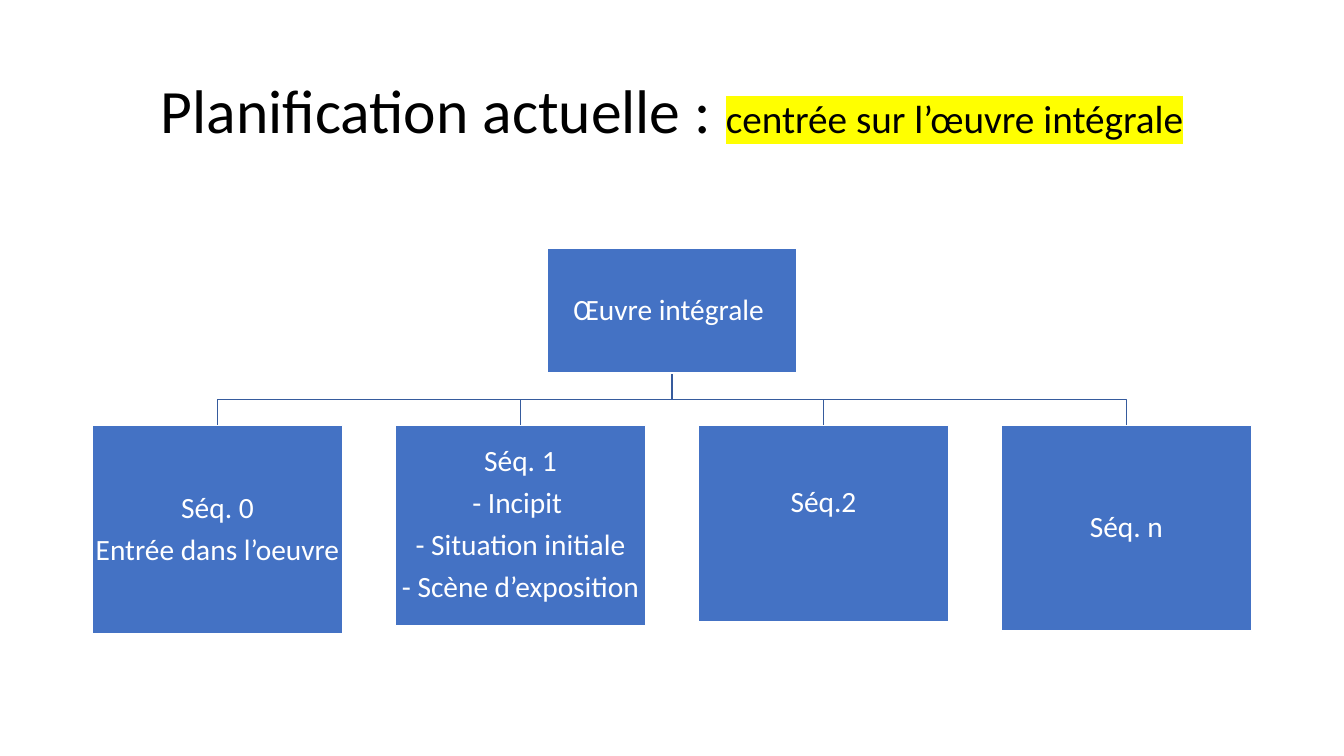
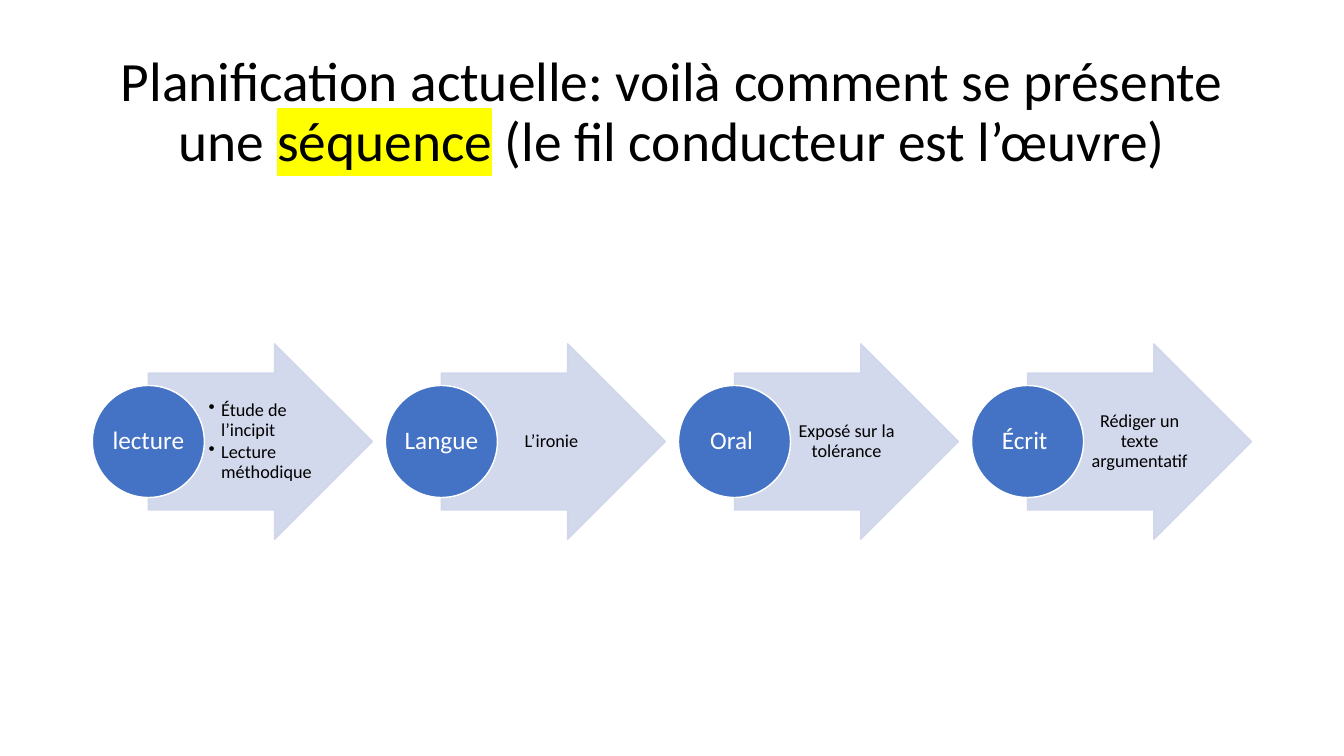
"""Build two slides on lesson planning: a sequence tree and a row of activities."""
import dataclasses

import lxml.etree
import pptx
import pptx.dml.color
import pptx.enum.shapes
import pptx.enum.text
import pptx.oxml.ns
import pptx.util

Pt = pptx.util.Pt
SHAPES = pptx.enum.shapes.MSO_SHAPE
ALIGN = pptx.enum.text.PP_ALIGN
MIDDLE = pptx.enum.text.MSO_ANCHOR.MIDDLE
qn = pptx.oxml.ns.qn


@dataclasses.dataclass(frozen=True)
class Theme:
    """Colours, font and type sizes of the presentation."""
    font: str = "Calibri"
    ink: str = "000000"
    paper: str = "FFFFFF"
    accent: str = "4472C4"
    branch: str = "365B9D"
    arrow: str = "CFD5EA"
    highlight: str = "FFFF00"
    arrow_opacity: int = 90
    title_size: float = 44
    subtitle_size: float = 28
    long_title_size: float = 39.6
    box_size: float = 21
    circle_size: float = 18
    arrow_size: float = 13
    line_spacing: float = 0.9
    line_width: float = 1


THEME = Theme()

TREE_TITLE = [
    ("Planification actuelle : ", THEME.title_size, False),
    ("centrée sur l’œuvre intégrale", THEME.subtitle_size, True),
]
TREE_ROOT = "Œuvre intégrale "
TREE_CHILDREN = [
    (["Séq. 0", "Entrée dans l’oeuvre"], 149, 1),
    (["Séq. 1", "- Incipit ", "- Situation initiale", "- Scène d’exposition"], 142.6, 1),
    (["Séq.2"], 140.4, 31),
    (["Séq. n"], 146.9, 1),
]

ACTIVITY_TITLE = [
    ("Planification actuelle: voilà comment se présente une ", THEME.long_title_size, False),
    ("séquence", THEME.long_title_size, True),
    (" (le fil conducteur est l’œuvre)", THEME.long_title_size, False),
]
ACTIVITIES = [
    ("lecture", ["Étude de l’incipit", "Lecture méthodique"]),
    ("Langue ", ["L’ironie "]),
    ("Oral ", ["Exposé sur la tolérance"]),
    ("Écrit ", ["Rédiger un texte argumentatif"]),
]

SLIDE_WIDTH, SLIDE_HEIGHT = 960, 540
MARGIN = 66
CONTENT_WIDTH = SLIDE_WIDTH - 2 * MARGIN
TITLE_TOP, TITLE_HEIGHT = 28.8, 104.4

BOX_WIDTH = 178.8
ROOT_TOP, ROOT_HEIGHT = 177.2, 89.3
CHILD_TOP = 304

CIRCLE = 80
ARROW_WIDTH, ARROW_HEIGHT = 160, 139.6
ROW_MIDDLE = 315.4
NOTE_WIDTH, NOTE_HEIGHT = 78, 98


def rgb(colour):
    """Return a colour object for a hex value."""
    return pptx.dml.color.RGBColor.from_string(colour)


def place(left, top, width, height):
    """Return a position and size in points."""
    return Pt(left), Pt(top), Pt(width), Pt(height)


def format_run(run, size, colour):
    """Set the font of a run."""
    run.font.name = THEME.font
    run.font.size = Pt(size)
    run.font.color.rgb = rgb(colour)


def highlight(run):
    """Put the marker colour behind a run."""
    marker = lxml.etree.Element(qn("a:highlight"))
    lxml.etree.SubElement(marker, qn("a:srgbClr"), val=THEME.highlight)
    run.font._element.find(qn("a:solidFill")).addnext(marker)


def add_bullet(paragraph, indent):
    """Give a paragraph a hanging bullet."""
    properties = paragraph._p.get_or_add_pPr()
    properties.set("marL", str(Pt(indent)))
    properties.set("indent", str(-Pt(indent)))
    lxml.etree.SubElement(properties, qn("a:buChar"), char="•")


def write(shape, lines, size, colour, insets=(1, 1, 1, 1)):
    """Write lines in a shape; several notes on an arrow become bullets."""
    frame = shape.text_frame
    frame.word_wrap = True
    frame.vertical_anchor = MIDDLE
    (frame.margin_left, frame.margin_top,
     frame.margin_right, frame.margin_bottom) = map(Pt, insets)
    bulleted = size == THEME.arrow_size and len(lines) > 1
    frame.text = "\n".join(lines)
    for paragraph in frame.paragraphs:
        paragraph.alignment = ALIGN.LEFT if bulleted else ALIGN.CENTER
        paragraph.line_spacing = THEME.line_spacing
        paragraph.space_after = Pt(size * (0.15 if bulleted else 0.35))
        if bulleted:
            add_bullet(paragraph, 9)
        for run in paragraph.runs:
            format_run(run, size, colour)


def add_filled(slide, kind, bounds, fill, line):
    """Add a flat preset shape."""
    shape = slide.shapes.add_shape(kind, *place(*bounds))
    shape.shadow.inherit = False
    shape.fill.solid()
    shape.fill.fore_color.rgb = rgb(fill)
    shape.line.color.rgb = rgb(line)
    shape.line.width = Pt(THEME.line_width)
    return shape


def add_box(slide, bounds, lines, bottom_inset=1):
    """Add a box of the tree."""
    box = add_filled(slide, SHAPES.RECTANGLE, bounds, THEME.accent, THEME.paper)
    write(box, lines, THEME.box_size, THEME.paper, (1, 1, 1, bottom_inset))


def add_branch(slide, start_x, start_y, end_x, end_y):
    """Draw the elbow line from the root to a child."""
    middle_y = (start_y + end_y) / 2
    builder = slide.shapes.build_freeform(Pt(start_x), Pt(start_y))
    corners = [(start_x, middle_y), (end_x, middle_y), (end_x, end_y)]
    builder.add_line_segments([(Pt(x), Pt(y)) for x, y in corners], close=False)
    branch = builder.convert_to_shape()
    branch.shadow.inherit = False
    branch.fill.background()
    branch.line.color.rgb = rgb(THEME.branch)
    branch.line.width = Pt(THEME.line_width)


def add_arrow(slide, left):
    """Add a pale, slightly transparent block arrow."""
    bounds = (left, ROW_MIDDLE - ARROW_HEIGHT / 2, ARROW_WIDTH, ARROW_HEIGHT)
    arrow = add_filled(slide, SHAPES.RIGHT_ARROW, bounds, THEME.arrow, THEME.arrow)
    arrow.adjustments[0], arrow.adjustments[1] = 0.7, 0.5
    for colour in arrow._element.spPr.iter(qn("a:srgbClr")):
        lxml.etree.SubElement(colour, qn("a:alpha"), val=str(THEME.arrow_opacity * 1000))


def add_titled_slide(presentation, layout, parts):
    """Add a slide and write its title."""
    slide = presentation.slides.add_slide(layout)
    frame = slide.shapes.title.text_frame
    frame.vertical_anchor = MIDDLE
    frame.word_wrap = True
    frame.auto_size = pptx.enum.text.MSO_AUTO_SIZE.NONE
    paragraph = frame.paragraphs[0]
    paragraph.alignment = ALIGN.CENTER
    paragraph.line_spacing = THEME.line_spacing
    for text, size, marked in parts:
        run = paragraph.add_run()
        run.text = text
        format_run(run, size, THEME.ink)
        if marked:
            highlight(run)
    return slide


def build_tree(slide):
    """Draw the work and its sequences."""
    centre = SLIDE_WIDTH / 2
    pitch = (CONTENT_WIDTH - BOX_WIDTH) / (len(TREE_CHILDREN) - 1)
    lefts = [MARGIN + index * pitch for index in range(len(TREE_CHILDREN))]
    for left in lefts:
        add_branch(slide, centre, ROOT_TOP + ROOT_HEIGHT, left + BOX_WIDTH / 2, CHILD_TOP)
    add_box(slide, (centre - BOX_WIDTH / 2, ROOT_TOP, BOX_WIDTH, ROOT_HEIGHT), [TREE_ROOT])
    for left, (lines, height, bottom_inset) in zip(lefts, TREE_CHILDREN):
        add_box(slide, (left, CHILD_TOP, BOX_WIDTH, height), lines, bottom_inset)


def build_activities(slide):
    """Draw the activities of one sequence."""
    pitch = (CONTENT_WIDTH - CIRCLE / 2 - ARROW_WIDTH) / (len(ACTIVITIES) - 1)
    for index, (name, notes) in enumerate(ACTIVITIES):
        left = MARGIN + index * pitch
        add_arrow(slide, left + CIRCLE / 2)
        note = slide.shapes.add_textbox(
            *place(left + CIRCLE, ROW_MIDDLE - NOTE_HEIGHT / 2, NOTE_WIDTH, NOTE_HEIGHT))
        write(note, notes, THEME.arrow_size, THEME.ink, (3, 1, 1, 1))
        bounds = (left, ROW_MIDDLE - CIRCLE / 2, CIRCLE, CIRCLE)
        circle = add_filled(slide, SHAPES.OVAL, bounds, THEME.accent, THEME.paper)
        write(circle, [name], THEME.circle_size, THEME.paper)


def main():
    """Build and save the presentation."""
    presentation = pptx.Presentation()
    presentation.slide_width = Pt(SLIDE_WIDTH)
    presentation.slide_height = Pt(SLIDE_HEIGHT)
    layout = presentation.slide_layouts.get_by_name("Title Only")
    title = layout.placeholders[0]
    title.left, title.top, title.width, title.height = place(
        MARGIN, TITLE_TOP, CONTENT_WIDTH, TITLE_HEIGHT)
    build_tree(add_titled_slide(presentation, layout, TREE_TITLE))
    build_activities(add_titled_slide(presentation, layout, ACTIVITY_TITLE))
    presentation.save("out.pptx")


if __name__ == "__main__":
    main()
